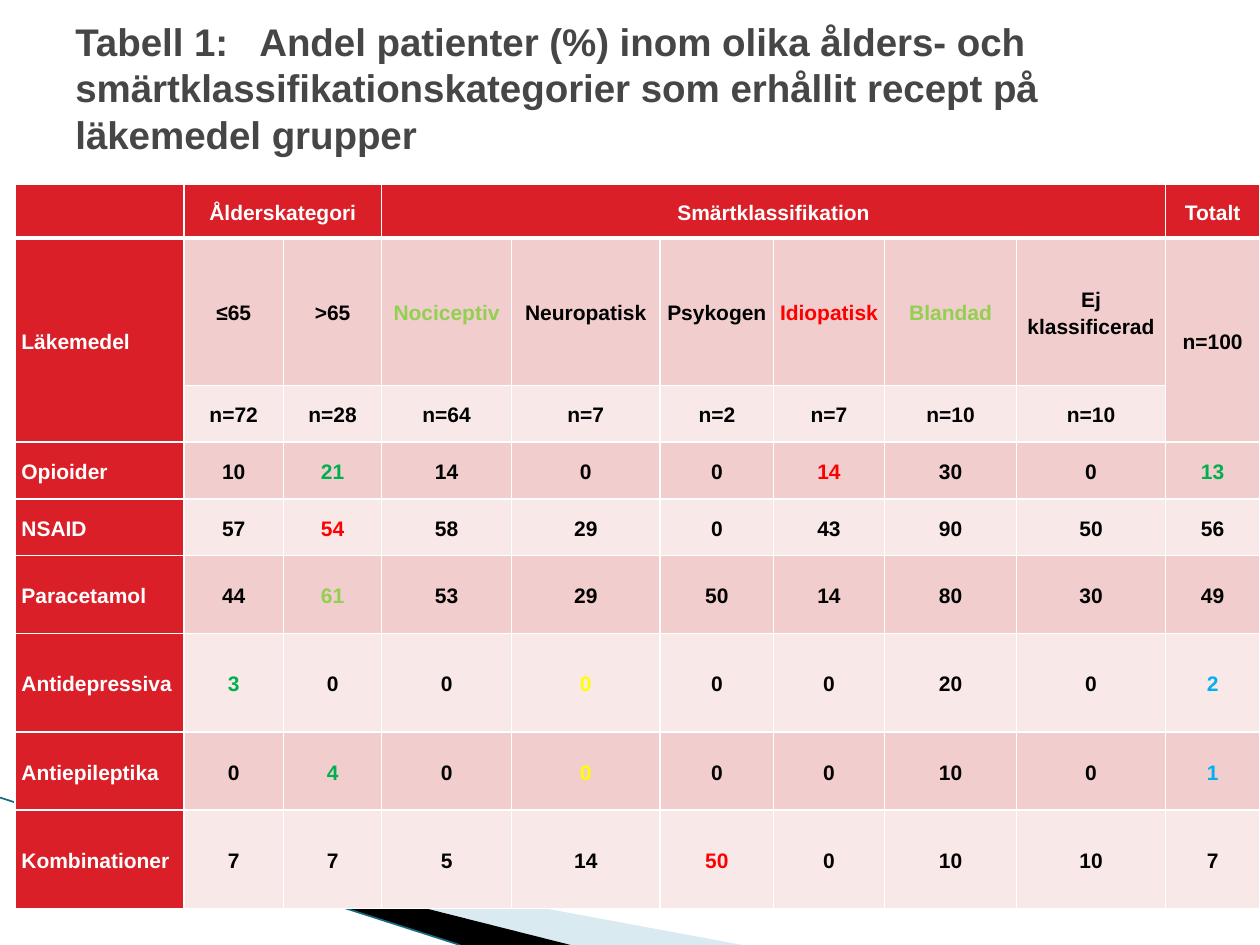
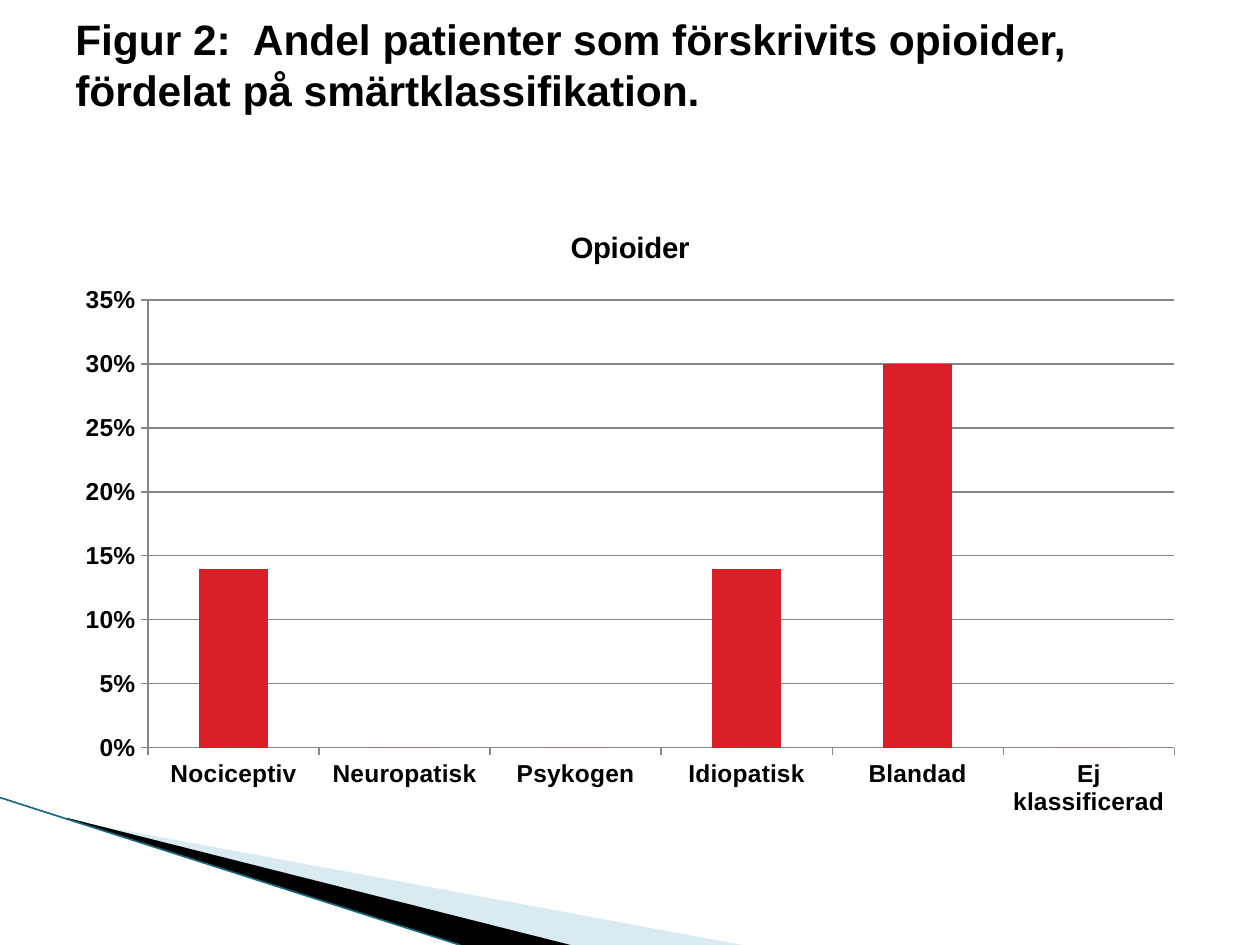
from dataclasses import dataclass

from lxml.etree import SubElement as Sub
from pptx import Presentation
from pptx.chart.data import CategoryChartData as ChartData
from pptx.dml.color import RGBColor as RGB
from pptx.enum.chart import XL_CHART_TYPE as Kind, XL_TICK_MARK as Tick
from pptx.enum.shapes import MSO_CONNECTOR as Link
from pptx.enum.text import MSO_ANCHOR as Anchor, PP_ALIGN as Align
from pptx.oxml.ns import qn
from pptx.util import Inches, Pt


@dataclass(frozen=True)
class Theme:
    """Colours, font and type sizes of the deck."""
    font: str = "Arial"
    red: str = "DA1F28"
    rose: str = "F1CDCD"
    blush: str = "F8E8E8"
    white: str = "FFFFFF"
    black: str = "000000"
    gray: str = "464646"
    grid: str = "868686"
    pale: str = "A0CBDC"
    teal: str = "166A82"
    lime: str = "92D050"
    green: str = "00B050"
    alert: str = "FF0000"
    yellow: str = "FFFF00"
    sky: str = "00B0F0"
    cell: float = 12
    axis: float = 14
    label: float = 16.8
    head: float = 22
    big: float = 24.3


T = Theme()
COLS = [1.34, 0.79, 0.78, 1.03, 1.18, 0.9, 0.88, 1.05, 1.18, 0.75]
ROWS = [0.43, 1.17, 0.45, 0.45, 0.45, 0.62, 0.78, 0.62, 0.78]
PAINS = ["Nociceptiv", "Neuropatisk", "Psykogen", "Idiopatisk", "Blandad", "Ej klassificerad"]
DATA = [
    ["", "Ålderskategori", "", "Smärtklassifikation", "", "", "", "", "", "Totalt"],
    ["Läkemedel", "≤65", ">65", *PAINS, "n=100"],
    ["", *(f"n={n}" for n in (72, 28, 64, 7, 2, 7, 10, 10)), ""],
    ["Opioider", 10, 21, 14, 0, 0, 14, 30, 0, 13],
    ["NSAID", 57, 54, 58, 29, 0, 43, 90, 50, 56],
    ["Paracetamol", 44, 61, 53, 29, 50, 14, 80, 30, 49],
    ["Antidepressiva", 3, 0, 0, 0, 0, 0, 20, 0, 2],
    ["Antiepileptika", 0, 4, 0, 0, 0, 0, 10, 0, 1],
    ["Kombinationer", 7, 7, 5, 14, 50, 0, 10, 10, 7],
]
SPANS = [(0, 1, 0, 2), (0, 3, 0, 8), (1, 0, 2, 0), (1, 9, 2, 9)]
MARKS = {
    T.lime: [(1, 3), (1, 7), (5, 2)],
    T.green: [(3, 2), (3, 9), (6, 1), (7, 2)],
    T.alert: [(1, 6), (3, 6), (4, 2), (8, 5)],
    T.yellow: [(6, 4), (7, 4)],
    T.sky: [(6, 9), (7, 9)],
}
TINTS = {spot: tint for tint, spots in MARKS.items() for spot in spots}


def style(font, size, color):
    """Set the bold deck font."""
    font.name, font.size, font.bold = T.font, Pt(size), True
    font.color.rgb = RGB.from_string(color)


def paint(fill, color):
    """Fill with one solid colour."""
    fill.solid()
    fill.fore_color.rgb = RGB.from_string(color)


def wedge(slide, box, dots, color, alpha=None):
    """Draw a filled outline from points relative to the box."""
    left, top = box[:2]
    spots = [(Inches(left + x), Inches(top + y)) for x, y in dots]
    path = slide.shapes.build_freeform(*spots[0], scale=1.0)
    path.add_line_segments(spots[1:], close=True)
    shape = path.convert_to_shape()
    shape.shadow.inherit = False
    shape.line.fill.background()
    paint(shape.fill, color)
    if alpha:
        tone = shape.fill._xPr.find(".//" + qn("a:srgbClr"))
        Sub(tone, qn("a:alpha"), val=str(alpha * 1000))


def band(slide, box):
    """Draw the swoosh in the lower left corner."""
    left, top, wide, high = box
    wedge(slide, box, [(0.55, 0.18), (wide, high), (4.52, high), (0.55, 0.17)], T.pale, 40)
    wedge(slide, box, [(0.53, 0.16), (4.53, high), (3.66, high), (0.54, 0.17)], T.black)
    ends = [Inches(n) for n in (left, top, left + 3.65, top + high)]
    edge = slide.shapes.add_connector(Link.STRAIGHT, *ends)
    edge.line.color.rgb = RGB.from_string(T.teal)
    edge.line.width = Pt(0.95)
    Sub(edge._element.spPr, qn("a:effectLst"))


def title(slide, box, lead, text, size, color, stop, foot=0.05):
    """Write a title whose text follows its lead at a tab stop."""
    frame = slide.shapes.add_textbox(*map(Inches, box)).text_frame
    frame.word_wrap = True
    frame.vertical_anchor = Anchor.MIDDLE
    frame.margin_bottom = Inches(foot)
    para = frame.paragraphs[0]
    tabs = Sub(para._p.get_or_add_pPr(), qn("a:tabLst"))
    Sub(tabs, qn("a:tab"), pos=str(Inches(stop)), algn="l")
    for part in (lead, "\t", text):
        run = para.add_run()
        run.text = part
        style(run.font, size, color)


def border(cell, row):
    """Rule a cell in white, thicker under the header."""
    props = cell._tc.get_or_add_tcPr()
    for side in "LRTB":
        thick = (row, side) in ((0, "B"), (1, "T"))
        line = Sub(props, qn(f"a:ln{side}"), w=str(Pt(3 if thick else 1)))
        Sub(Sub(line, qn("a:solidFill")), qn("a:srgbClr"), val=T.white)


def fill_cell(cell, row, col, text):
    """Style one cell and write its text."""
    dark = row == 0 or col == 0
    border(cell, row)
    paint(cell.fill, T.red if dark else T.rose if row % 2 else T.blush)
    cell.vertical_anchor = Anchor.MIDDLE
    cell.margin_left = cell.margin_right = Inches(0.05)
    cell.margin_top = cell.margin_bottom = 0
    para = cell.text_frame.paragraphs[0]
    para.line_spacing = 1.15
    para.alignment = Align.LEFT if col == 0 else Align.CENTER
    color = T.white if dark else TINTS.get((row, col), T.black)
    if text == "":
        para.font.size = Pt(T.cell)
        return
    run = para.add_run()
    run.text = str(text)
    style(run.font, T.cell, color)


def grid(slide, box):
    """Build the table of drug groups."""
    table = slide.shapes.add_table(len(ROWS), len(COLS), *map(Inches, box)).table
    table.horz_banding = False
    for col, wide in zip(table.columns, COLS):
        col.width = Inches(wide)
    for row, high in zip(table.rows, ROWS):
        row.height = Inches(high)
    for row, line in enumerate(DATA):
        for col, text in enumerate(line):
            fill_cell(table.cell(row, col), row, col, text)
    for top, left, low, right in SPANS:
        table.cell(top, left).merge(table.cell(low, right))


def bars(slide, box):
    """Build the column chart of opioid shares."""
    data = ChartData(number_format="0%")
    data.categories = PAINS
    data.add_series("Opioider", [0.14, 0, 0, 0.14, 0.3, 0])
    chart = slide.shapes.add_chart(Kind.COLUMN_CLUSTERED, *map(Inches, box), data).chart
    style(chart.font, T.axis, T.black)
    chart.has_legend = False
    chart.has_title = True
    run = chart.chart_title.text_frame.paragraphs[0].add_run()
    run.text = "Opioider"
    style(run.font, T.label, T.black)
    chart.chart_title.include_in_layout = False
    plot = chart.plots[0]
    plot.vary_by_categories = False
    plot.gap_width = 150
    paint(plot.series[0].format.fill, T.red)
    scale = chart.value_axis
    scale.minimum_scale, scale.maximum_scale, scale.major_unit = 0, 0.35, 0.05
    scale.tick_labels.number_format = "0%"
    scale.tick_labels.number_format_is_linked = False
    for part in (scale, chart.category_axis, scale.major_gridlines):
        part.format.line.color.rgb = RGB.from_string(T.grid)
        part.format.line.width = Pt(0.75)
    for axis in (scale, chart.category_axis):
        axis.major_tick_mark = Tick.OUTSIDE


def page(deck):
    """Add a blank slide with the shared band."""
    slide = deck.slides.add_slide(deck.slide_layouts[6])
    band(slide, (0, 6.33, 5.89, 1.17))
    return slide


def main():
    """Build and save the deck."""
    deck = Presentation()
    deck.slide_width, deck.slide_height = Inches(10), Inches(7.5)
    slide = page(deck)
    grid(slide, (0.12, 1.46, sum(COLS), sum(ROWS)))
    title(slide, (0.5, 0, 9, 1.39), "Tabell 1:",
          "Andel patienter (%) inom olika ålders- och smärtklassifikationskategorier "
          "som erhållit recept på läkemedel grupper", T.head, T.gray, 1.46)
    slide = page(deck)
    bars(slide, (0.5, 1.62, 9, 4.95))
    title(slide, (0.5, 0, 9, 1.23), "Figur 2:",
          "Andel patienter som förskrivits opioider, fördelat på smärtklassifikation.",
          T.big, T.black, 1.41, 0.27)
    deck.save("out.pptx")


if __name__ == "__main__":
    main()
